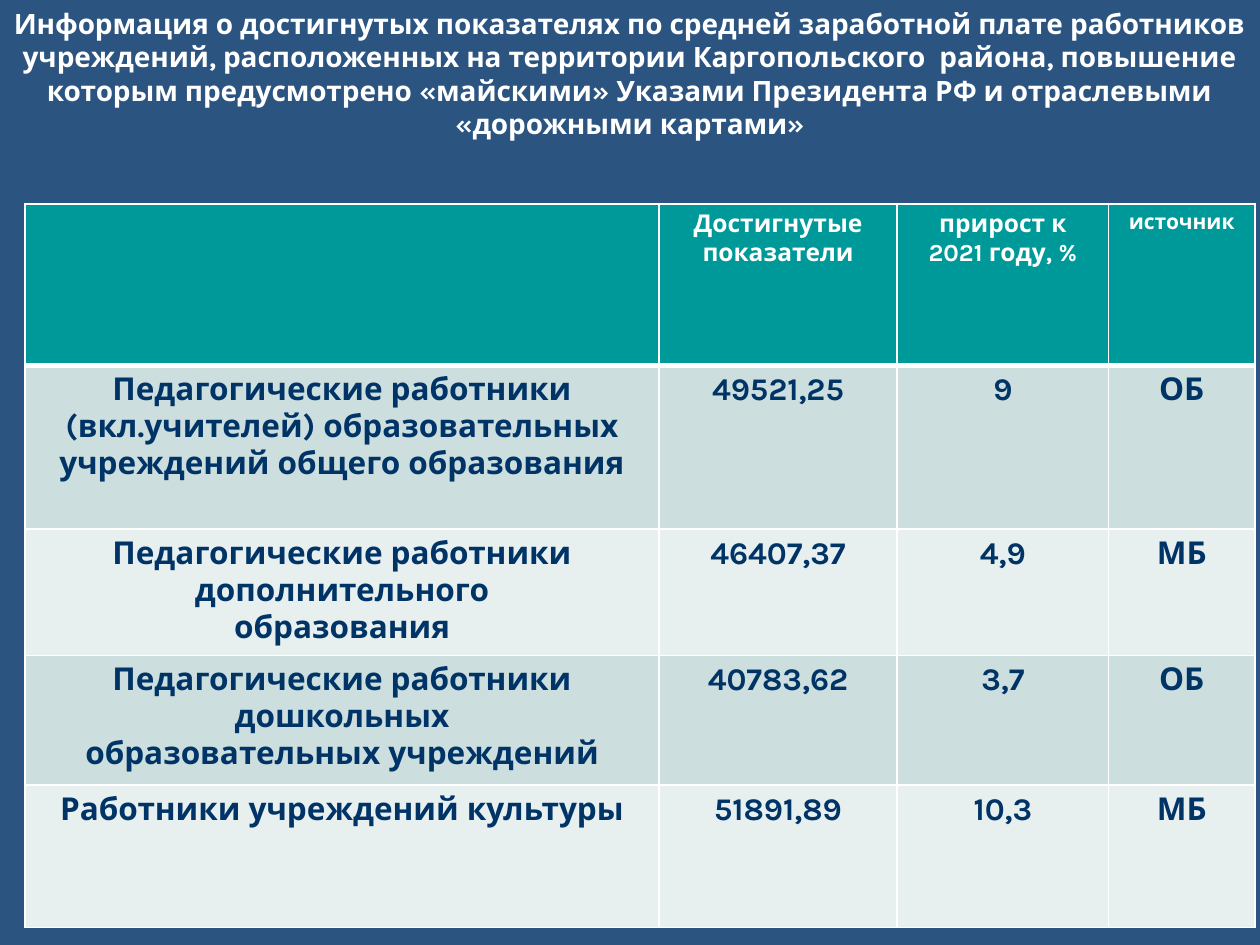
from dataclasses import dataclass

from lxml.etree import SubElement
from pptx import Presentation
from pptx.dml.color import RGBColor
from pptx.enum.text import PP_ALIGN
from pptx.oxml.ns import qn
from pptx.util import Inches, Pt


@dataclass(frozen=True)
class Theme:
    font: str = "Karla"
    background: str = "2B5481"
    light: str = "FFFFFF"
    dark: str = "003366"
    header: str = "009999"
    bands: tuple = ("CCDEDE", "E7EFEF")
    title_size: int = 16
    header_size: int = 14
    source_size: int = 12
    body_size: int = 18
    thin_line: int = 1
    thick_line: int = 3


@dataclass(frozen=True)
class CellStyle:
    fill: str
    color: str
    size: int
    top: int
    bottom: int


THEME = Theme()
SLIDE_WIDTH, SLIDE_HEIGHT = 10, 7.5
TABLE_LEFT, TABLE_TOP = 0.2, 1.62
COLUMN_WIDTHS = (5.03, 1.89, 1.68, 1.16)
ROW_HEIGHTS = (1.28, 1.3, 1.0, 1.03, 1.13)

TITLE = (
    "Информация о достигнутых показателях по средней заработной плате работников",
    "учреждений, расположенных на территории Каргопольского  района, повышение "
    "которым предусмотрено «майскими» Указами Президента РФ и отраслевыми",
    "«дорожными картами»",
)

# Each line break inside a cell starts a new paragraph
ROWS = (
    ("", "Достигнутые показатели", "прирост к\n2021 году, %", "источник"),
    ("Педагогические работники (вкл.учителей) образовательных учреждений общего образования",
     "49521,25", "9", "ОБ"),
    ("Педагогические работники дополнительного\nобразования", "46407,37", "4,9", "МБ"),
    ("Педагогические работники дошкольных\nобразовательных учреждений",
     "40783,62", "3,7", "ОБ"),
    ("Работники учреждений культуры", "51891,89", "10,3", "МБ"),
)


def write_paragraphs(text_frame, lines, size: int, color: str) -> None:
    for index, line in enumerate(lines):
        paragraph = text_frame.paragraphs[0] if index == 0 else text_frame.add_paragraph()
        paragraph.alignment = PP_ALIGN.CENTER
        if not line:
            continue
        run = paragraph.add_run()
        run.text = line
        run.font.name = THEME.font
        run.font.size = Pt(size)
        run.font.bold = True
        run.font.color.rgb = RGBColor.from_string(color)


def add_border(cell, side: str, width: int) -> None:
    line = SubElement(cell._tc.get_or_add_tcPr(), qn(f"a:ln{side}"), w=str(Pt(width)))
    fill = SubElement(line, qn("a:solidFill"))
    SubElement(fill, qn("a:srgbClr"), val=THEME.light)


def cell_style(row: int, column: int) -> CellStyle:
    if row == 0:
        is_source = column == len(COLUMN_WIDTHS) - 1
        size = THEME.source_size if is_source else THEME.header_size
        return CellStyle(THEME.header, THEME.light, size, THEME.thin_line, THEME.thick_line)
    top = THEME.thick_line if row == 1 else THEME.thin_line
    band = THEME.bands[(row - 1) % len(THEME.bands)]
    return CellStyle(band, THEME.dark, THEME.body_size, top, THEME.thin_line)


def draw_cell(cell, text: str, style: CellStyle) -> None:
    borders = {"L": THEME.thin_line, "R": THEME.thin_line, "T": style.top, "B": style.bottom}
    for side, width in borders.items():
        add_border(cell, side, width)
    cell.fill.solid()
    cell.fill.fore_color.rgb = RGBColor.from_string(style.fill)
    write_paragraphs(cell.text_frame, text.split("\n"), style.size, style.color)


def add_title(slide) -> None:
    box = slide.shapes.add_textbox(0, 0, Inches(SLIDE_WIDTH), Inches(1.18))
    box.text_frame.word_wrap = True
    write_paragraphs(box.text_frame, TITLE, THEME.title_size, THEME.light)


def add_salary_table(slide) -> None:
    table = slide.shapes.add_table(
        len(ROWS), len(COLUMN_WIDTHS), Inches(TABLE_LEFT), Inches(TABLE_TOP),
        Inches(sum(COLUMN_WIDTHS)), Inches(sum(ROW_HEIGHTS))).table
    table.horz_banding = False
    for column, width in zip(table.columns, COLUMN_WIDTHS):
        column.width = Inches(width)
    for row, height in zip(table.rows, ROW_HEIGHTS):
        row.height = Inches(height)
    for row_index, texts in enumerate(ROWS):
        for column_index, text in enumerate(texts):
            draw_cell(table.cell(row_index, column_index), text,
                      cell_style(row_index, column_index))


def main() -> None:
    presentation = Presentation()
    presentation.slide_width = Inches(SLIDE_WIDTH)
    presentation.slide_height = Inches(SLIDE_HEIGHT)
    slide = presentation.slides.add_slide(presentation.slide_layouts[6])

    # Background
    slide.background.fill.solid()
    slide.background.fill.fore_color.rgb = RGBColor.from_string(THEME.background)

    # Heading and table
    add_title(slide)
    add_salary_table(slide)
    presentation.save("out.pptx")


if __name__ == "__main__":
    main()
